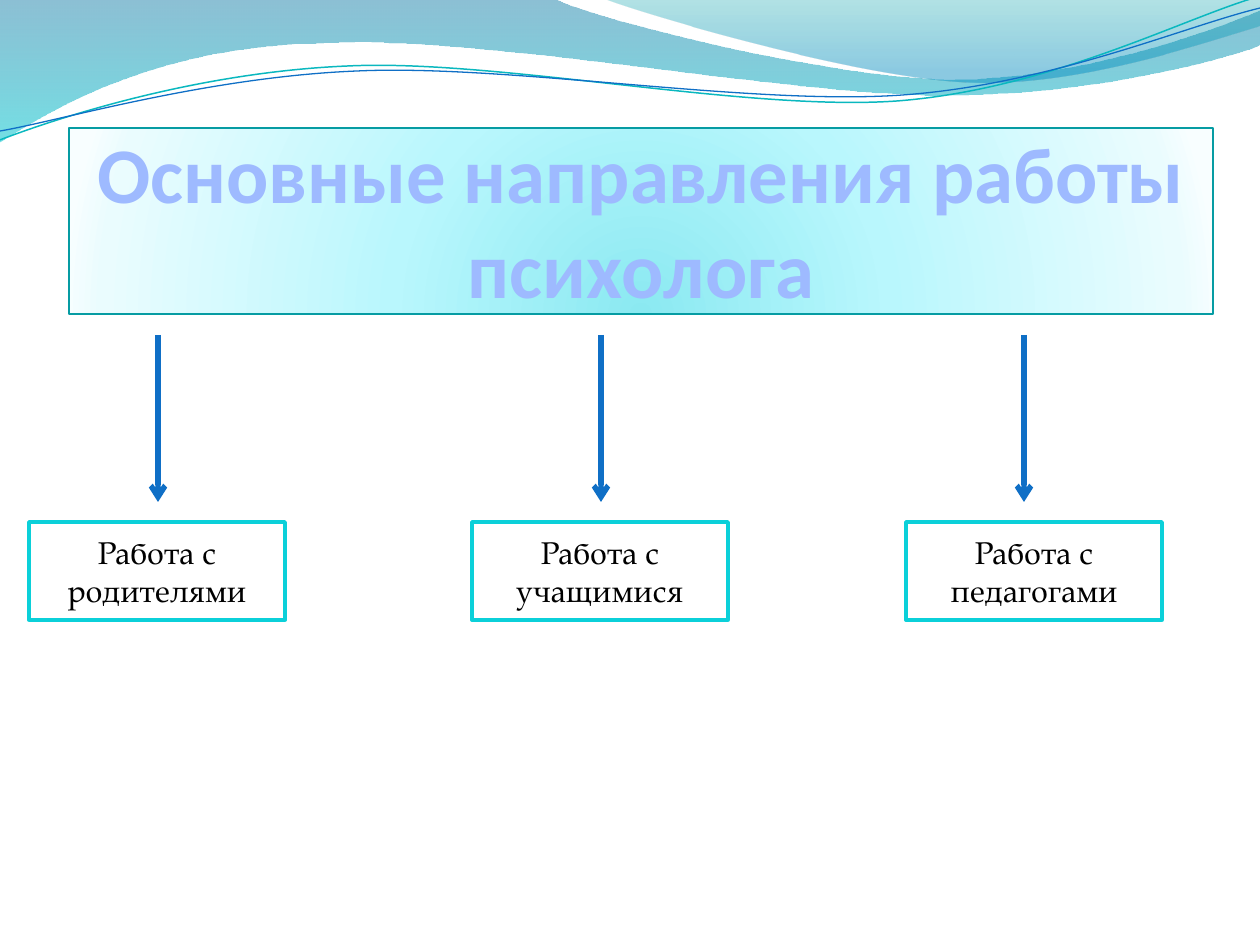
from math import cos, radians, sin

from pptx import Presentation
from pptx.dml.color import RGBColor
from pptx.enum.shapes import MSO_CONNECTOR, MSO_SHAPE
from pptx.enum.text import MSO_ANCHOR, PP_ALIGN
from pptx.oxml import parse_xml
from pptx.oxml.ns import nsdecls, qn
from pptx.util import Emu, Pt

PX = 914400 / 126
TILT = 357.3
DOWN = '<a:lin ang="5400000" scaled="0"/>'
GLOW = '<a:path path="circle"><a:fillToRect l="50000" t="130000" r="50000" b="-30000"/></a:path>'

WAVES = [
    ((0, 0), [(554, -1), (600, 21, 837, 79, 955, 79), (1075, 79, 1207, 33, 1260, 11),
              (1261, 45), (1239, 55, 1096, 96, 940, 95), (784, 95, 481, 35, 324, 43),
              (163, 45, 58, 105, -1, 142), (0, 0)],
     [(0, "0074A1", 45), (100, "00C6CF", 55)]),
    ((604, -1), [(641, 14, 859, 78, 969, 82), (1079, 87, 1211, 40, 1260, 26),
                 (1260, 0), (604, -1)],
     [(0, "00A1A9", 30), (80, "008BBF", 45)]),
]
STRANDS = [
    ((0, 140), [(60, 117, 199, 72, 349, 66), (498, 59, 747, 112, 898, 101),
                (1050, 89, 1182, 19, 1257, -3)], (629, 72), "0AB8BF", 0.85),
    ((0, 131), [(59, 121, 207, 77, 357, 71), (508, 64, 752, 106, 903, 95),
                (1053, 84, 1185, 26, 1260, 8)], (629, 74), "0F6FC6", 0.75),
]
TITLE_STOPS = [(0, "8BE9F1", 100), (43, "B9F7FD", 100), (93, "EAFCFE", 100), (100, "F8FEFF", 100)]
DIRECTIONS = [("Работа с родителями", 29, 158), ("Работа с учащимися", 472, 601),
              ("Работа с педагогами", 906, 1024)]


def px(n):
    """Turn pixels into EMU."""
    return Emu(round(n * PX))


def rgb(code):
    """Turn a hex string into a colour."""
    return RGBColor.from_string(code)


def set_line(sp, color, width):
    """Give an outline or connector its colour and width in points."""
    sp.line.color.rgb = rgb(color)
    sp.line.width = Pt(width)


def set_gradient(sp, stops, direction):
    """Fill a shape with (percent, colour, opacity) stops."""
    gs = "".join(f'<a:gs pos="{pos * 1000}"><a:srgbClr val="{color}">'
                 f'<a:alpha val="{alpha * 1000}"/></a:srgbClr></a:gs>'
                 for pos, color, alpha in stops)
    grad = parse_xml(f'<a:gradFill {nsdecls("a")} rotWithShape="1">'
                     f'<a:gsLst>{gs}</a:gsLst>{direction}</a:gradFill>')
    sp.fill.background()
    spPr = sp._element.spPr
    spPr.replace(spPr.find(qn("a:noFill")), grad)


def turn(point, center, degrees):
    """Rotate a point clockwise about a center."""
    a = radians(degrees)
    dx, dy = point[0] - center[0], point[1] - center[1]
    return center[0] + dx * cos(a) - dy * sin(a), center[1] + dx * sin(a) + dy * cos(a)


def bend(sp, segments):
    """Join each three points of a 6-number segment into one Bezier curve."""
    nodes = iter(list(sp._element.iter(qn("a:lnTo"))))
    for seg in segments:
        node = next(nodes)
        if len(seg) == 6:
            curve = parse_xml(f'<a:cubicBezTo {nsdecls("a")}/>')
            node.addprevious(curve)
            for part in (node, next(nodes), next(nodes)):
                curve.append(part[0])
                part.getparent().remove(part)


def add_curve(s, start, segments, center=(0, 0), rotation=0, close=False):
    """Add a freeform of straight (2 numbers) and Bezier (6 numbers) segments."""
    points = [start] + [seg[i:i + 2] for seg in segments for i in range(0, len(seg), 2)]
    first, *rest = [tuple(map(px, turn(pt, center, -rotation))) for pt in points]
    builder = s.shapes.build_freeform(*first)
    builder.add_line_segments(rest, close=close)
    sp = builder.convert_to_shape()
    bend(sp, segments)
    sp.rotation = rotation
    sp.shadow.inherit = False
    sp.fill.background()
    sp.line.fill.background()
    return sp


def add_box(s, x, y, w, h, line, width):
    """Add a white outlined rectangle."""
    sp = s.shapes.add_shape(MSO_SHAPE.RECTANGLE, px(x), px(y), px(w), px(h))
    sp.shadow.inherit = False
    sp.fill.solid()
    sp.fill.fore_color.rgb = rgb("FFFFFF")
    set_line(sp, line, width)
    return sp


def add_text(sp, text, *, size, font, color, bold=False, anchor=MSO_ANCHOR.MIDDLE, insets=None):
    """Write centred text into a shape."""
    tf = sp.text_frame
    tf.word_wrap = True
    tf.vertical_anchor = anchor
    if insets:
        tf.margin_left, tf.margin_top, tf.margin_right, tf.margin_bottom = map(px, insets)
    p = tf.paragraphs[0]
    p.alignment = PP_ALIGN.CENTER
    r = p.add_run()
    r.text = text
    r.font.size, r.font.name, r.font.bold = Pt(size), font, bold
    r.font.color.rgb = rgb(color)


def add_arrow(s, x, top, bottom):
    """Add a downward arrow."""
    c = s.shapes.add_connector(MSO_CONNECTOR.STRAIGHT, px(x), px(top), px(x), px(bottom))
    set_line(c, "0F6FC6", 3)
    c.line._get_or_add_ln().append(parse_xml(f'<a:tailEnd {nsdecls("a")} type="arrow"/>'))
    c._element.spPr.append(parse_xml(f'<a:effectLst {nsdecls("a")}/>'))


def main():
    """Build the slide and save it."""
    prs = Presentation()
    prs.slide_width, prs.slide_height = px(1260), px(945)
    s = prs.slides.add_slide(prs.slide_layouts[6])

    for start, segments, stops in WAVES:
        set_gradient(add_curve(s, start, segments, close=True), stops, DOWN)
    for start, segments, center, color, width in STRANDS:
        set_line(add_curve(s, start, segments, center, TILT), color, width)

    title = add_box(s, 69, 128, 1144, 186, "069CA3", 0.75)
    set_gradient(title, TITLE_STOPS, GLOW)
    add_text(title, "Основные направления работы психолога", size=45, font="Calibri",
             color="9EBAFF", bold=True, anchor=MSO_ANCHOR.BOTTOM, insets=(0, 6, 0, 0))

    for text, left, arrow_x in DIRECTIONS:
        add_arrow(s, arrow_x, 335, 502)
        box = add_box(s, left, 522, 256, 98, "0BD0D9", 2)
        add_text(box, text, size=18, font="TeX Gyre Pagella", color="000000")

    prs.save("out.pptx")


if __name__ == "__main__":
    main()
